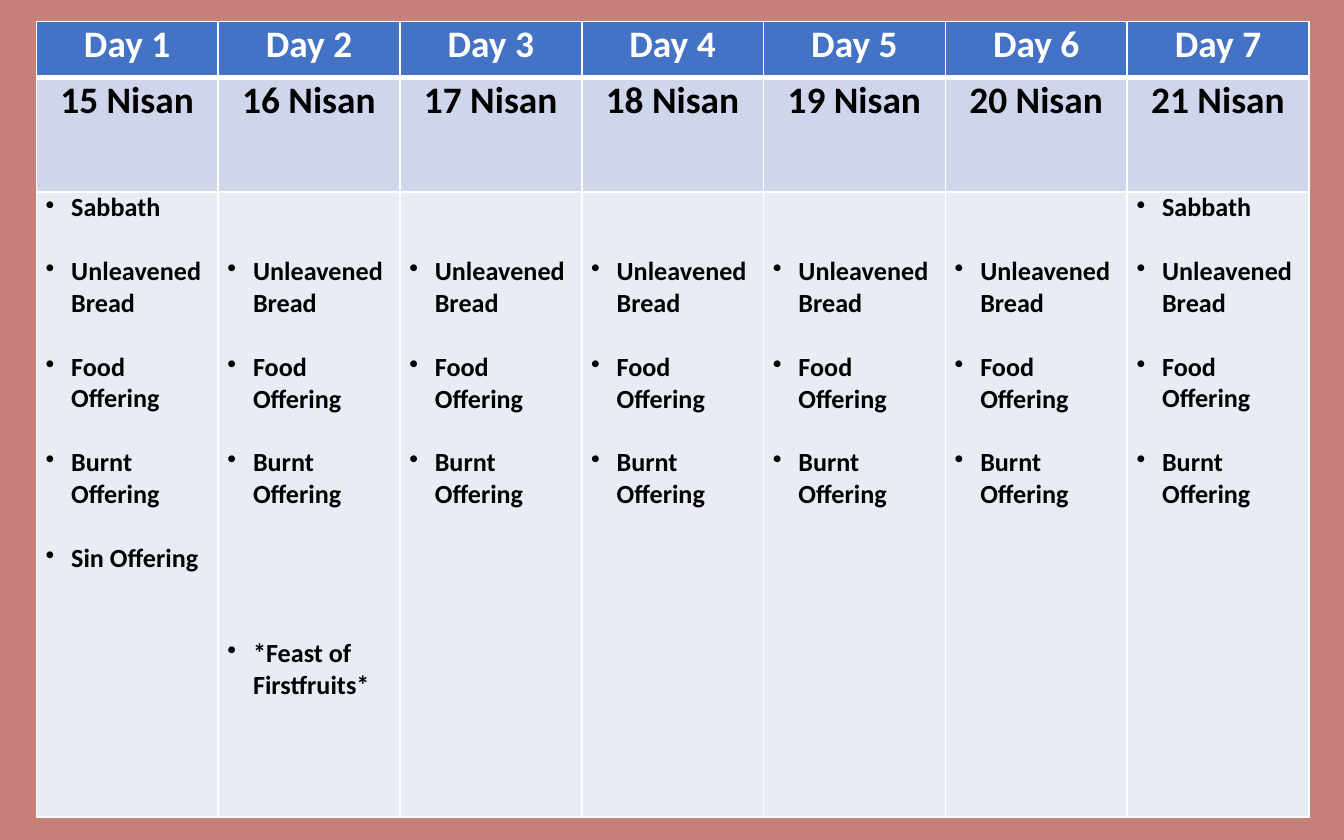
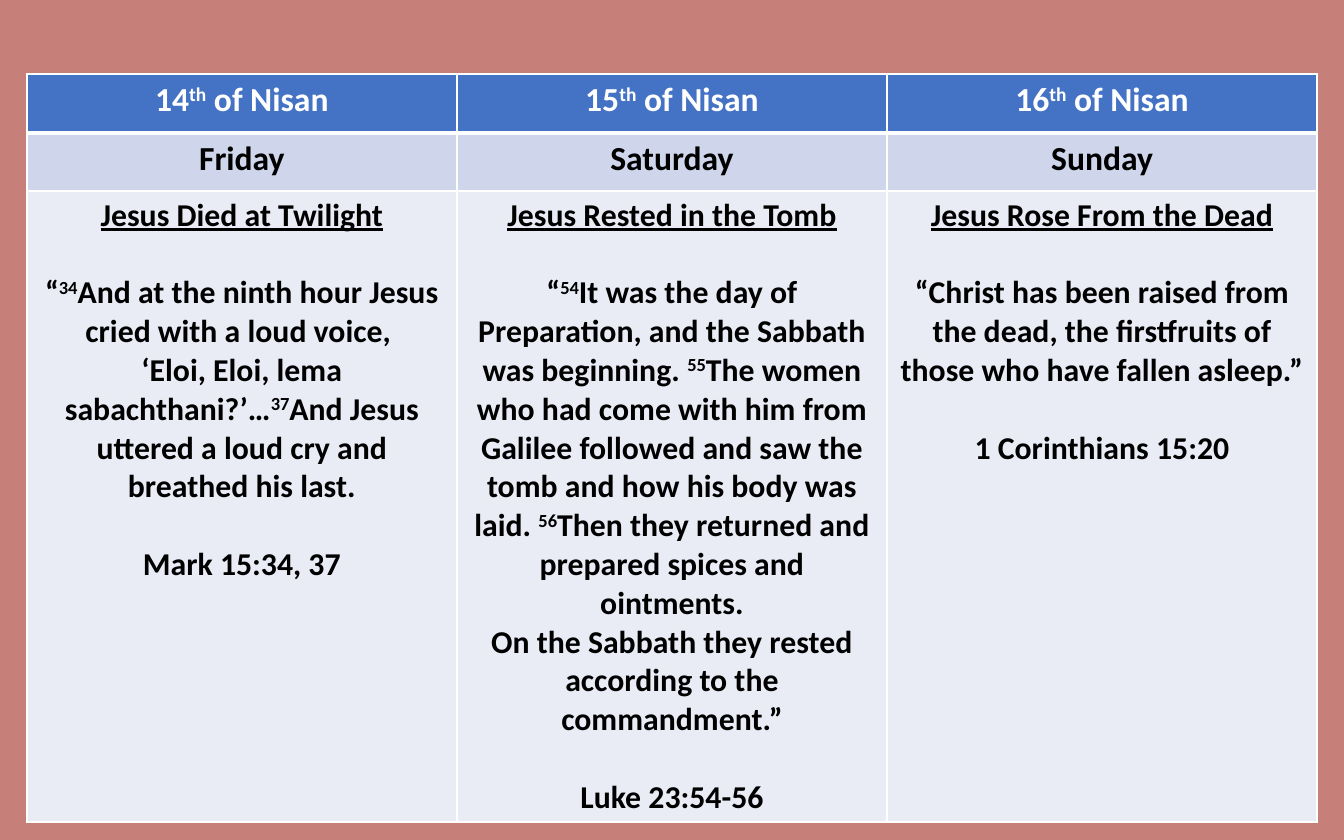
from lxml import etree
from pptx import Presentation
from pptx import util as u
from pptx.dml.color import RGBColor
from pptx.enum import text
from pptx.oxml import ns

COLORS = {
    "background": "C78079",
    "header": "4472C4",
    "subheader": "CFD5EA",
    "body": "E9EBF5",
    "white": "FFFFFF",
    "black": "000000",
}
ROW_FILLS = ["header", "subheader", "body"]
FONT = "Calibri"
LINE_HEIGHT = 1.22  # Calibri line height relative to its size
THIN, THICK = 1, 3
BULLET_INDENT = u.Inches(0.19)

DAILY_ITEMS = ["Unleavened Bread", "Food Offering", "Burnt Offering"]
FEAST_DAYS, FIRST_DATE = 7, 15
SABBATHS = (1, 7)
SIN_OFFERING_DAY, FIRSTFRUITS_DAY = 1, 2

# Text between carets is superscript.
EASTER_DAYS = [
    ("14^th^ of Nisan", "Friday", "Jesus Died at Twilight",
     ["“^34^And at the ninth hour Jesus cried with a loud voice, ",
      "‘Eloi, Eloi, lema sabachthani?’…^37^And Jesus uttered a loud cry "
      "and breathed his last."],
     "Mark 15:34, 37"),
    ("15^th^ of Nisan", "Saturday", "Jesus Rested in the Tomb",
     ["“^54^It was the day of Preparation, and the Sabbath was beginning. "
      "^55^The women who had come with him from Galilee followed and saw "
      "the tomb and how his body was laid. ^56^Then they returned and "
      "prepared spices and ointments.",
      "On the Sabbath they rested according to the commandment.”"],
     "Luke 23:54-56"),
    ("16^th^ of Nisan", "Sunday", "Jesus Rose From the Dead",
     ["“Christ has been raised from the dead, the firstfruits of those "
      "who have fallen asleep.”"],
     "1 Corinthians 15:20"),
]


def rgb(name):
    return RGBColor.from_string(COLORS[name])


def lines(count, size):
    """Height of a number of text lines."""
    return u.Pt(round(count * size * LINE_HEIGHT, 2))


def add_page(deck):
    page = deck.slides.add_slide(deck.slide_layouts[6])
    page.background.fill.solid()
    page.background.fill.fore_color.rgb = rgb("background")
    return page


def set_borders(cell, top, bottom):
    properties = cell._tc.get_or_add_tcPr()
    for side, width in (("L", THIN), ("R", THIN), ("T", top), ("B", bottom)):
        line = etree.SubElement(properties, ns.qn(f"a:ln{side}"),
                                w=str(u.Pt(width)))
        fill = etree.SubElement(line, ns.qn("a:solidFill"))
        etree.SubElement(fill, ns.qn("a:srgbClr"), val=COLORS["white"])


def add_calendar_table(page, box, columns, heights, vertical_margin):
    """Add a three-row table with equal columns and the shared row styles."""
    left, top, width = (u.Inches(value) for value in box)
    frame = page.shapes.add_table(len(heights), columns, left, top, width,
                                  u.Inches(sum(heights)))
    table = frame.table
    table.first_row = table.horz_banding = False
    for row, height in zip(table.rows, heights):
        row.height = u.Inches(height)
    for index, (row, fill) in enumerate(zip(table.rows, ROW_FILLS)):
        for cell in row.cells:
            set_borders(cell, THICK if index == 1 else THIN,
                        THICK if index == 0 else THIN)
            cell.fill.solid()
            cell.fill.fore_color.rgb = rgb(fill)
            cell.margin_left = cell.margin_right = u.Inches(0.07)
            cell.margin_top = cell.margin_bottom = u.Inches(vertical_margin)
    return table


def add_para(cell, content, size, color="black", gap=0, centered=True):
    """Write the next paragraph of a cell, with a gap counted in lines."""
    frame = cell.text_frame
    para = frame.paragraphs[0] if not frame.text else frame.add_paragraph()
    para.alignment = text.PP_ALIGN.CENTER if centered else text.PP_ALIGN.LEFT
    if gap:
        para.space_before = lines(gap, size)
    font = para.font
    font.name, font.size, font.bold = FONT, u.Pt(size), True
    font.color.rgb = rgb(color)
    for index, part in enumerate(content.split("^")):
        span = para.add_run()
        span.text = part
        if index % 2:
            span._r.get_or_add_rPr().set("baseline", "30000")
    return para


def add_bullet(cell, content, size, gap):
    para = add_para(cell, content, size, gap=gap, centered=False)
    properties = para._p.get_or_add_pPr()
    properties.set("marL", str(BULLET_INDENT))
    properties.set("indent", str(-BULLET_INDENT))
    bullet = etree.Element(ns.qn("a:buChar"), char="•")
    properties.find(ns.qn("a:defRPr")).addprevious(bullet)


def fill_offerings(cell, day, size=14):
    items = [(item, 1) for item in DAILY_ITEMS]
    if day in SABBATHS:
        items.insert(0, ("Sabbath", 0))
    else:
        items[0] = (DAILY_ITEMS[0], 0)
        cell.margin_top = lines(2, size)  # keeps the Sabbath line free
    if day == SIN_OFFERING_DAY:
        items.append(("Sin Offering", 1))
    if day == FIRSTFRUITS_DAY:
        items.append(("*Feast of Firstfruits*", 4))
    for item, gap in items:
        add_bullet(cell, item, size, gap)


def build_feast_week(page, box):
    table = add_calendar_table(page, box, FEAST_DAYS, [0.42, 0.85, 4.65], 0)
    for column in range(FEAST_DAYS):
        day = column + 1
        add_para(table.cell(0, column), f"Day {day}", 20, "white")
        add_para(table.cell(1, column), f"{FIRST_DATE + column} Nisan", 20)
        fill_offerings(table.cell(2, column), day)


def build_easter_days(page, box):
    table = add_calendar_table(page, box, len(EASTER_DAYS),
                               [0.44, 0.43, 4.61], 0.04)
    for column, day in enumerate(EASTER_DAYS):
        date, weekday, event, verses, reference = day
        add_para(table.cell(0, column), date, 18, "white")
        add_para(table.cell(1, column), weekday, 18)
        body = table.cell(2, column)
        add_para(body, event, 17).runs[0].font.underline = True
        for index, verse in enumerate(verses):
            add_para(body, verse, 17, gap=0 if index else 1)
        add_para(body, reference, 17, gap=1)


def main():
    deck = Presentation()
    deck.slide_width, deck.slide_height = u.Inches(10), u.Inches(6.25)
    build_feast_week(add_page(deck), (0.27, 0.16, 9.47))
    build_easter_days(add_page(deck), (0.2, 0.55, 9.6))
    deck.save("out.pptx")


if __name__ == "__main__":
    main()
